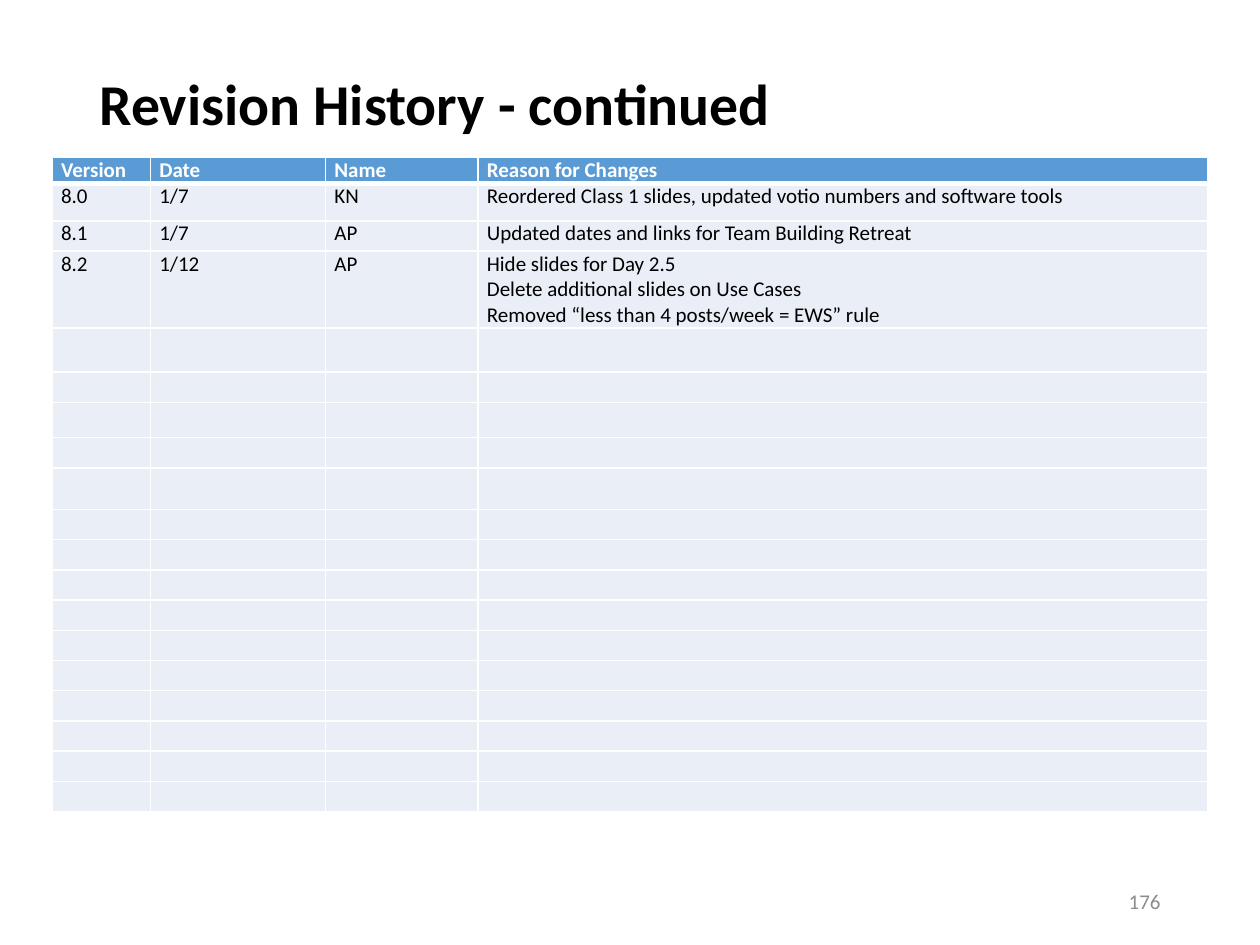
from typing import NamedTuple

from lxml import etree
from pptx import Presentation
from pptx import util as u
from pptx.dml.color import RGBColor
from pptx.enum import text
from pptx.oxml.ns import qn

WHITE = RGBColor(0xFF, 0xFF, 0xFF)
BLACK = RGBColor(0x00, 0x00, 0x00)
GRAY = RGBColor(0x8C, 0x8C, 0x8C)
HEADER_BLUE = RGBColor(0x5B, 0x9B, 0xD5)
BODY_BLUE = RGBColor(0xEA, 0xEF, 0xF7)
FONT = "Calibri"
SLIDE_W, SLIDE_H = u.Inches(10), u.Inches(7.5)


class Area(NamedTuple):
    """A rectangle in percent of the slide's width and height."""
    left: float
    top: float
    width: float
    height: float

    def emu(self) -> tuple[int, ...]:
        sides = (SLIDE_W, SLIDE_H, SLIDE_W, SLIDE_H)
        return tuple(round(side * share / 100) for side, share in zip(sides, self))


class Revision(NamedTuple):
    version: str = ""
    date: str = ""
    name: str = ""
    reason: str = ""


TITLE_AREA = Area(6.9, 5.33, 86.2, 19.33)
TABLE_AREA = Area(4.15, 16.67, 91.7, 69.47)
NUMBER_AREA = Area(70.6, 92.67, 22.5, 5.33)

COLUMN_WIDTHS = (0.78, 1.39, 1.21, 5.79)
ROW_HEIGHT = 0.24
SPECIAL_HEIGHTS = {0: 0.2, 1: 0.3, 3: 0.61, 4: 0.35, 6: 0.28, 8: 0.33}
ROW_COUNT = 19

HEADER = Revision("Version", "Date", "Name", "Reason for Changes")
REVISIONS = [
    Revision("8.0", "1/7", "KN",
             "Reordered Class 1 slides, updated votio numbers and software tools"),
    Revision("8.1", "1/7", "AP", "Updated dates and links for Team Building Retreat"),
    Revision("8.2", "1/12", "AP",
             "Hide slides for Day 2.5\n"
             "Delete additional slides on Use Cases\n"
             "Removed “less than 4 posts/week = EWS” rule"),
]


def format_text(frame, size: float, color: RGBColor, bold: bool = False) -> None:
    """Format all runs, and the paragraph ends so that empty lines keep the size."""
    for paragraph in frame.paragraphs:
        for run in paragraph.runs:
            run.font.name = FONT
            run.font.size = u.Pt(size)
            run.font.bold = bold
            run.font.color.rgb = color
        etree.SubElement(paragraph._p, qn("a:endParaRPr"), sz=str(round(size * 100)))


def add_borders(cell, top: float, bottom: float) -> None:
    """Draw white cell borders, 1 pt at the sides; call before filling the cell."""
    properties = cell._tc.get_or_add_tcPr()
    for side, width in (("L", 1), ("R", 1), ("T", top), ("B", bottom)):
        line = etree.SubElement(properties, qn(f"a:ln{side}"), w=str(u.Pt(width)))
        fill = etree.SubElement(line, qn("a:solidFill"))
        etree.SubElement(fill, qn("a:srgbClr"), val=str(WHITE))


def fill_cell(cell, content: str, row: int) -> None:
    is_header = row == 0
    add_borders(cell, top=3 if row == 1 else 1, bottom=3 if is_header else 1)
    cell.fill.solid()
    cell.fill.fore_color.rgb = HEADER_BLUE if is_header else BODY_BLUE
    cell.margin_left = cell.margin_right = u.Inches(0.07)
    cell.margin_top = cell.margin_bottom = 0
    cell.text_frame.text = content
    format_text(cell.text_frame, 12, WHITE if is_header else BLACK, is_header)


def add_title(slide) -> None:
    title = slide.shapes.title
    title.left, title.top, title.width, title.height = TITLE_AREA.emu()
    frame = title.text_frame
    frame.text = "Revision History - continued\v"
    frame.auto_size = text.MSO_AUTO_SIZE.NONE
    frame.vertical_anchor = text.MSO_ANCHOR.MIDDLE
    frame.paragraphs[0].alignment = text.PP_ALIGN.LEFT
    frame.paragraphs[0].line_spacing = 0.9
    format_text(frame, 33, BLACK, bold=True)


def add_history(slide) -> None:
    table = slide.shapes.add_table(ROW_COUNT, len(HEADER), *TABLE_AREA.emu()).table
    table.horz_banding = False
    for column, width in zip(table.columns, COLUMN_WIDTHS):
        column.width = u.Inches(width)
    entries = [HEADER, *REVISIONS]
    entries += [Revision()] * (ROW_COUNT - len(entries))
    for index, (row, entry) in enumerate(zip(table.rows, entries)):
        row.height = u.Inches(SPECIAL_HEIGHTS.get(index, ROW_HEIGHT))
        for cell, content in zip(row.cells, entry):
            fill_cell(cell, content, index)


def add_page_number(slide) -> None:
    frame = slide.shapes.add_textbox(*NUMBER_AREA.emu()).text_frame
    frame.word_wrap = True
    frame.vertical_anchor = text.MSO_ANCHOR.MIDDLE
    frame.text = "176"
    frame.paragraphs[0].alignment = text.PP_ALIGN.RIGHT
    format_text(frame, 12, GRAY)


def main() -> None:
    deck = Presentation()
    deck.slide_width, deck.slide_height = SLIDE_W, SLIDE_H
    slide = deck.slides.add_slide(deck.slide_layouts.get_by_name("Title Only"))
    add_title(slide)
    add_history(slide)
    add_page_number(slide)
    deck.save("out.pptx")


if __name__ == "__main__":
    main()
